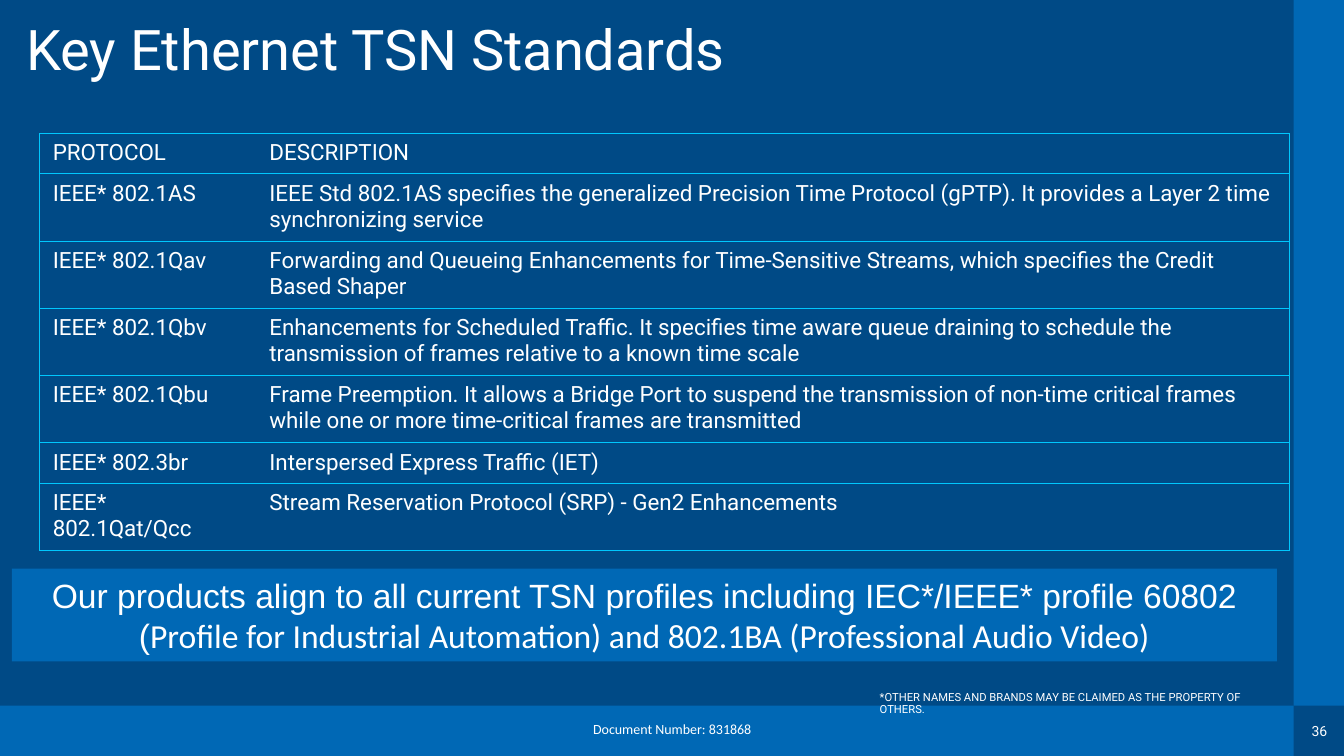
from dataclasses import dataclass

from lxml import etree
from pptx import Presentation
from pptx import util as u
from pptx.dml.color import RGBColor
from pptx.enum import shapes, text
from pptx.oxml import ns

NAVY = RGBColor(0x00, 0x4A, 0x86)
BLUE = RGBColor(0x00, 0x68, 0xB5)
CYAN = RGBColor(0x00, 0xC7, 0xFD)
WHITE = RGBColor(0xFF, 0xFF, 0xFF)

WIDTH, HEIGHT, BAND = 33.87, 19.05, 1.27
TABLE_LEFT, TABLE_TOP = 1.0, 3.36
COLUMN_WIDTHS = (5.46, 26.03)
SINGLE_ROW, DOUBLE_ROW = 1.01, 1.69


@dataclass(frozen=True)
class Box:
    left: float
    top: float
    width: float
    height: float


@dataclass(frozen=True)
class Run:
    words: str
    size: float
    font: str = "Roboto"


@dataclass(frozen=True)
class Label:
    box: Box
    run: Run
    align: text.PP_ALIGN = text.PP_ALIGN.LEFT
    anchor: text.MSO_ANCHOR = text.MSO_ANCHOR.TOP
    side_inset: float = 0
    top_inset: float = 0
    spacing: float = 0.9
    wrap: bool = True


@dataclass(frozen=True)
class Standard:
    protocol: str
    description: str
    height: float = DOUBLE_ROW


BANDS = (
    Box(0, HEIGHT - BAND, WIDTH - BAND, BAND),
    Box(WIDTH - BAND, 0, BAND, HEIGHT - BAND),
)

LABELS = (
    Label(Box(14.5, 18.08, 4.88, 0.64), Run("Document Number: 831868", 10, "Calibri"),
          text.PP_ALIGN.CENTER, side_inset=0.25, top_inset=0.13, wrap=False),
    Label(Box(33.02, 18.21, 0.46, 0.43), Run("36", 10),
          text.PP_ALIGN.CENTER, spacing=1.0, wrap=False),
    Label(Box(0.66, 0, 30.58, 2.64), Run("Key Ethernet TSN Standards", 40),
          anchor=text.MSO_ANCHOR.MIDDLE),
    Label(Box(21.92, 17.3, 10.1, 0.86),
          Run("*OTHER NAMES AND BRANDS MAY BE CLAIMED AS THE PROPERTY OF OTHERS.", 8),
          side_inset=0.25, top_inset=0.13),
)

STANDARDS = (
    Standard("PROTOCOL", "DESCRIPTION", SINGLE_ROW),
    Standard("IEEE* 802.1AS",
             "IEEE Std 802.1AS specifies the generalized Precision Time Protocol (gPTP). "
             "It provides a Layer 2 time synchronizing service"),
    Standard("IEEE* 802.1Qav",
             "Forwarding and Queueing Enhancements for Time-Sensitive Streams, "
             "which specifies the Credit Based Shaper"),
    Standard("IEEE* 802.1Qbv",
             "Enhancements for Scheduled Traffic. It specifies time aware queue draining "
             "to schedule the transmission of frames relative to a known time scale"),
    Standard("IEEE* 802.1Qbu",
             "Frame Preemption. It allows a Bridge Port to suspend the transmission of "
             "non-time critical frames while one or more time-critical frames are transmitted"),
    Standard("IEEE* 802.3br", "Interspersed Express Traffic (IET)", SINGLE_ROW),
    Standard("IEEE* 802.1Qat/Qcc",
             "Stream Reservation Protocol (SRP) - Gen2 Enhancements", SINGLE_ROW),
)

BANNER = Box(0.3, 14.33, 31.88, 2.34)
BANNER_RUNS = (
    Run("Our products align to all current TSN profiles including "
        "IEC*/IEEE* profile 60802 (", 24, "Arial"),
    Run("Profile for Industrial Automation) and 802.1BA (Professional Audio Video)",
        24, "Calibri"),
)


def place(box: Box) -> tuple:
    return u.Cm(box.left), u.Cm(box.top), u.Cm(box.width), u.Cm(box.height)


def add_run(paragraph, run: Run) -> None:
    added = paragraph.add_run()
    added.text = run.words
    added.font.size = u.Pt(run.size)
    added.font.name = run.font
    added.font.color.rgb = WHITE


def set_insets(target, side: float, vertical: float) -> None:
    target.margin_left = target.margin_right = u.Cm(side)
    target.margin_top = target.margin_bottom = u.Cm(vertical)


def add_rectangle(slide, box: Box):
    shape = slide.shapes.add_shape(shapes.MSO_SHAPE.RECTANGLE, *place(box))
    shape.shadow.inherit = False
    shape.fill.solid()
    shape.fill.fore_color.rgb = BLUE
    shape.line.fill.background()
    return shape


def add_label(slide, label: Label) -> None:
    frame = slide.shapes.add_textbox(*place(label.box)).text_frame
    frame.word_wrap = label.wrap
    frame.vertical_anchor = label.anchor
    set_insets(frame, label.side_inset, label.top_inset)
    paragraph = frame.paragraphs[0]
    paragraph.alignment = label.align
    paragraph.line_spacing = label.spacing
    add_run(paragraph, label.run)


def set_borders(cell, visible: str) -> None:
    properties = cell._tc.get_or_add_tcPr()
    for index, side in enumerate("LRTB"):
        line = etree.Element(ns.qn(f"a:ln{side}"), w=str(u.Pt(0.5)))
        if side in visible:
            fill = etree.SubElement(line, ns.qn("a:solidFill"))
            etree.SubElement(fill, ns.qn("a:srgbClr"), val=str(CYAN))
        else:
            etree.SubElement(line, ns.qn("a:noFill"))
        properties.insert(index, line)


def add_standards_table(slide) -> None:
    box = Box(TABLE_LEFT, TABLE_TOP, sum(COLUMN_WIDTHS),
              sum(standard.height for standard in STANDARDS))
    table = slide.shapes.add_table(len(STANDARDS), len(COLUMN_WIDTHS), *place(box)).table
    table.first_row = table.horz_banding = False
    for column, width in zip(table.columns, COLUMN_WIDTHS):
        column.width = u.Cm(width)
    for row, standard in zip(table.rows, STANDARDS):
        row.height = u.Cm(standard.height)
        contents = (standard.protocol, standard.description)
        for cell, words, outer_side in zip(row.cells, contents, "LR"):
            set_insets(cell, 0.33, 0.17)
            cell.fill.solid()
            cell.fill.fore_color.rgb = NAVY
            set_borders(cell, outer_side + "TB")
            add_run(cell.text_frame.paragraphs[0], Run(words, 16))


def add_banner(slide) -> None:
    frame = add_rectangle(slide, BANNER).text_frame
    frame.word_wrap = True
    frame.vertical_anchor = text.MSO_ANCHOR.MIDDLE
    set_insets(frame, 0.15, 0.15)
    paragraph = frame.paragraphs[0]
    paragraph.alignment = text.PP_ALIGN.CENTER
    for run in BANNER_RUNS:
        add_run(paragraph, run)


def main() -> None:
    presentation = Presentation()
    presentation.slide_width = u.Cm(WIDTH)
    presentation.slide_height = u.Cm(HEIGHT)
    slide = presentation.slides.add_slide(presentation.slide_layouts[6])
    slide.background.fill.solid()
    slide.background.fill.fore_color.rgb = NAVY
    for band in BANDS:
        add_rectangle(slide, band)
    for label in LABELS:
        add_label(slide, label)
    add_standards_table(slide)
    add_banner(slide)
    presentation.save("out.pptx")


if __name__ == "__main__":
    main()
